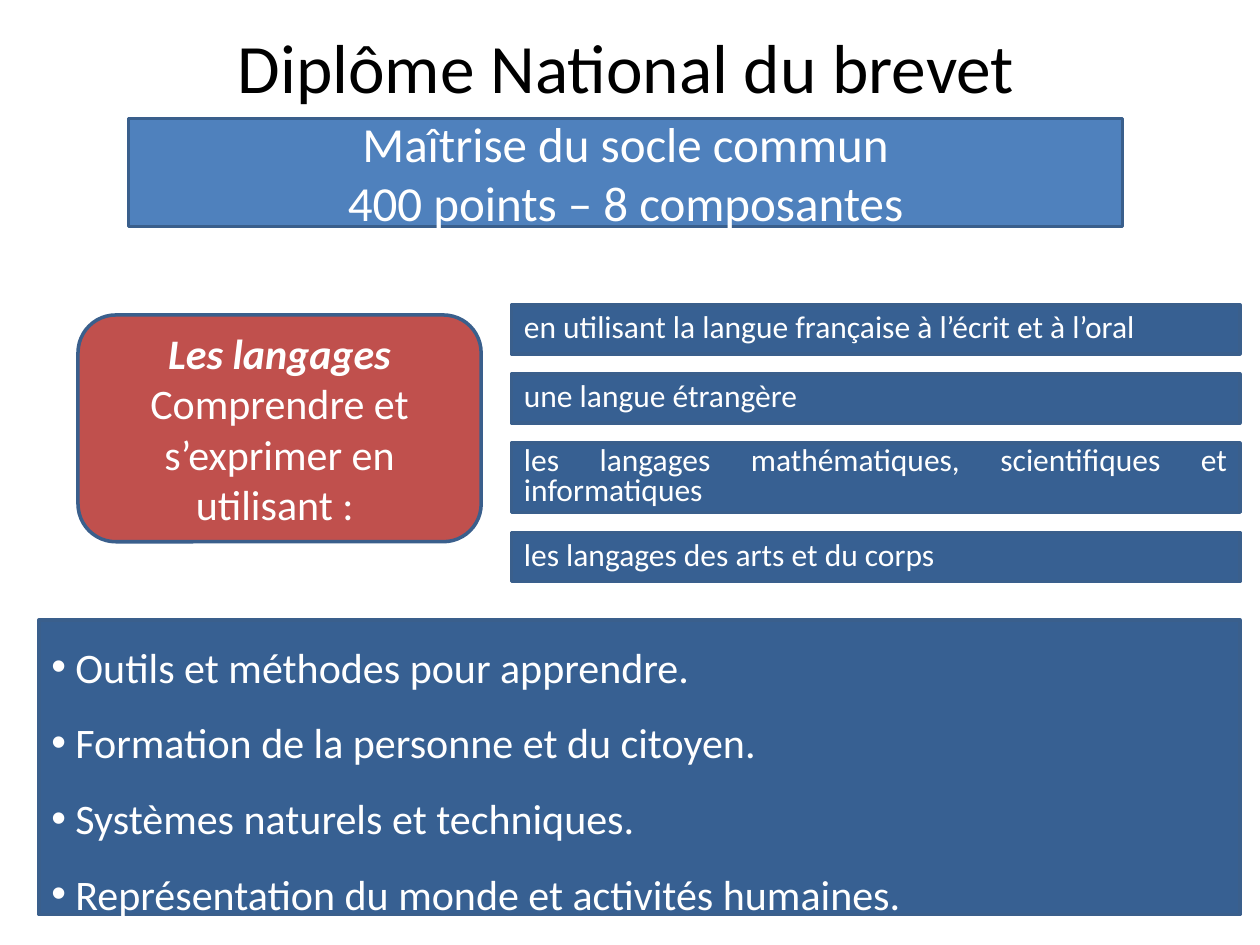
from dataclasses import dataclass

from lxml.etree import SubElement
from pptx import Presentation
from pptx.dml.color import RGBColor
from pptx.enum.shapes import MSO_SHAPE as Shape
from pptx.enum.text import MSO_ANCHOR as Anchor, PP_ALIGN as Align
from pptx.oxml.ns import qn
from pptx.util import Pt


@dataclass(frozen=True)
class Theme:
    font: str = "Calibri"
    black: str = "000000"
    white: str = "FFFFFF"
    blue: str = "4F81BD"
    navy: str = "376092"
    red: str = "C0504D"
    outline: str = "3A5F8C"
    line_width: float = 2
    title: float = 39.6
    heading: float = 28
    body: float = 24
    small: float = 18


@dataclass(frozen=True)
class Box:
    left: float
    top: float
    width: float
    height: float

    def emu(self) -> tuple:
        return Pt(self.left), Pt(self.top), Pt(self.width), Pt(self.height)


@dataclass(frozen=True)
class Language:
    text: str
    height: float = 28.1


THEME = Theme()
BULLET_INDENT = 13.75
RIGHT_EDGE = 708.5
LANGUAGE_LEFT, LANGUAGE_TOP, LANGUAGE_GAP = 292.3, 174.2, 11.4

LANGUAGES = [
    Language("en utilisant la langue française à l’écrit et à l’oral"),
    Language("une langue étrangère"),
    Language("les langages mathématiques, scientifiques et informatiques", 39.6),
    Language("les langages des arts et du corps"),
]
DOMAINS = [
    "Outils et méthodes pour apprendre.",
    "Formation de la personne et du citoyen.",
    "Systèmes naturels et techniques.",
    "Représentation du monde et activités humaines.",
]


def add_bullet(p) -> None:
    pPr = p._p.get_or_add_pPr()
    pPr.set("marL", str(Pt(BULLET_INDENT)))
    pPr.set("indent", str(-Pt(BULLET_INDENT)))
    SubElement(pPr, qn("a:buFont")).set("typeface", "Arial")
    SubElement(pPr, qn("a:buChar")).set("char", "•")


def write(sp, text: str, *, size: float, color: str = THEME.white,
          align=Align.CENTER, spacing: float = 1.0, bullets: bool = False,
          strong_first: bool = False) -> None:
    """Write each line of text as one paragraph."""
    tf = sp.text_frame
    tf.word_wrap = True
    tf.vertical_anchor = Anchor.MIDDLE
    for i, line in enumerate(text.split("\n")):
        p = tf.paragraphs[0] if i == 0 else tf.add_paragraph()
        p.alignment = align
        p.line_spacing = spacing
        if bullets:
            add_bullet(p)
        r = p.add_run()
        r.text = line
        r.font.name = THEME.font
        r.font.size = Pt(size)
        r.font.color.rgb = RGBColor.from_string(color)
        r.font.bold = r.font.italic = strong_first and i == 0


def add_panel(s, box: Box, fill: str, kind=Shape.RECTANGLE):
    sp = s.shapes.add_shape(kind, *box.emu())
    sp.shadow.inherit = False
    sp.fill.solid()
    sp.fill.fore_color.rgb = RGBColor.from_string(fill)
    sp.line.color.rgb = RGBColor.from_string(THEME.outline)
    sp.line.width = Pt(THEME.line_width)
    return sp


def add_languages(s) -> None:
    top = LANGUAGE_TOP
    for language in LANGUAGES:
        box = Box(LANGUAGE_LEFT, top, RIGHT_EDGE - LANGUAGE_LEFT, language.height)
        write(add_panel(s, box, THEME.navy), language.text, size=THEME.small,
              align=Align.JUSTIFY, spacing=0.8)
        top += language.height + LANGUAGE_GAP


def main() -> None:
    prs = Presentation()
    prs.slide_width, prs.slide_height = Pt(720), Pt(540)
    s = prs.slides.add_slide(prs.slide_layouts[6])

    # Title and heading band
    title = s.shapes.add_textbox(*Box(33.8, 11.5, 648, 51.8).emu())
    write(title, "Diplôme National du brevet", size=THEME.title, color=THEME.black)
    band = add_panel(s, Box(73.4, 67.7, 568.1, 61.9), THEME.blue)
    write(band, "Maîtrise du socle commun\n400 points – 8 composantes",
          size=THEME.heading)

    # Languages: theme on the left, its four components on the right
    theme_box = add_panel(s, Box(44.6, 180, 230.4, 129.6), THEME.red,
                          Shape.ROUNDED_RECTANGLE)
    write(theme_box, "Les langages\nComprendre et s’exprimer en utilisant : ",
          size=THEME.body, strong_first=True)
    add_languages(s)

    # Other domains
    domains = add_panel(s, Box(22.3, 354.2, RIGHT_EDGE - 22.3, 168.5), THEME.navy)
    write(domains, "\n".join(DOMAINS), size=THEME.body, align=Align.JUSTIFY,
          spacing=1.5, bullets=True)

    prs.save("out.pptx")


if __name__ == "__main__":
    main()
